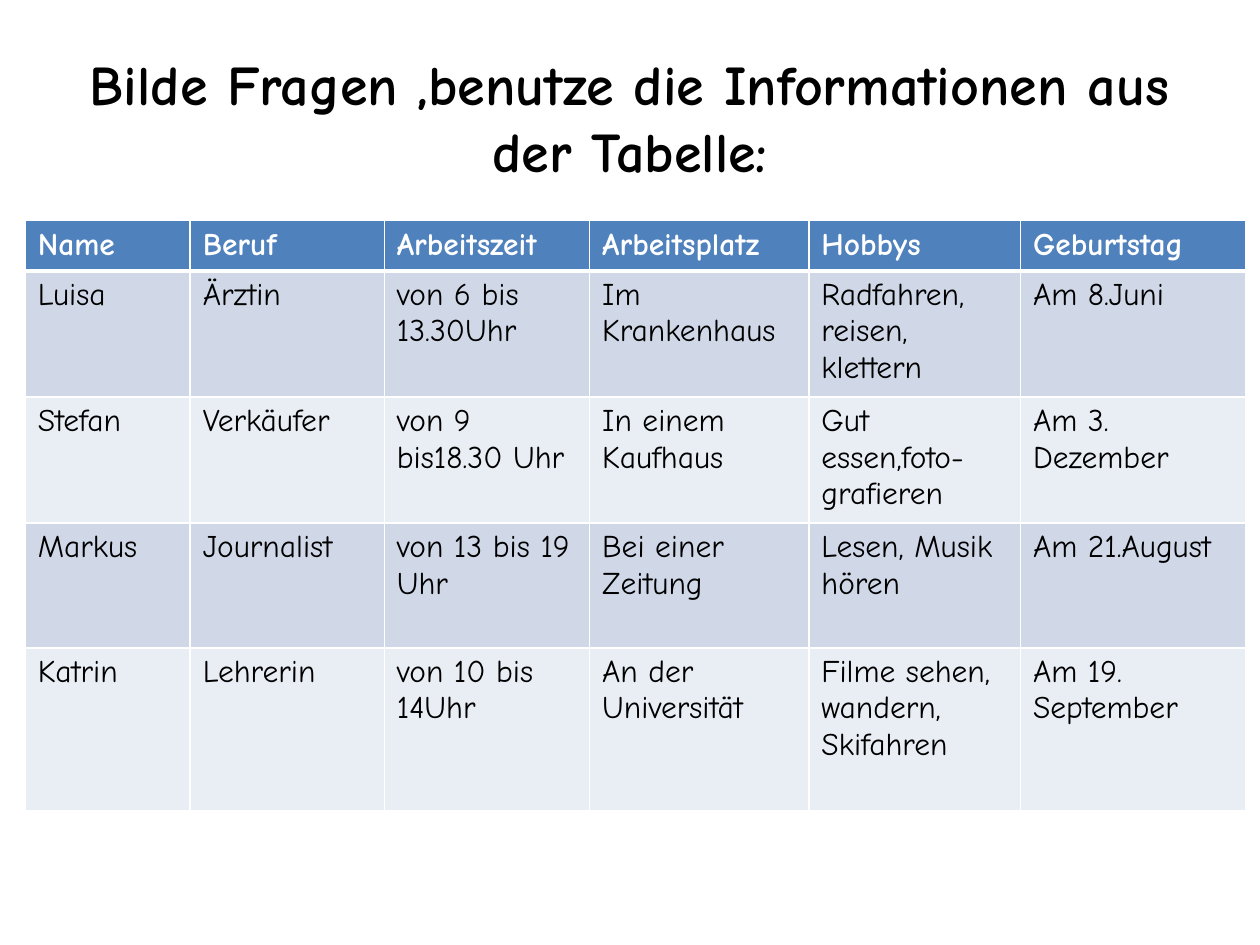
import lxml.etree
import pptx
import pptx.dml.color
import pptx.enum.text
import pptx.oxml.ns
import pptx.util
from pptx.util import Inches

COLORS = {
    "text": "000000",
    "white": "FFFFFF",
    "header": "4F81BD",
    "odd_row": "D0D8E8",
    "even_row": "E9EDF4",
}
FONT = "Comic Neue"
TITLE = "Bilde Fragen ,benutze die Informationen aus der Tabelle:"
COLUMN_WIDTHS = [1.31, 1.54, 1.63, 1.74, 1.68, 1.79]
ROW_HEIGHTS = [0.4, 0.99, 0.99, 0.99, 1.29]
ROWS = [
    ["Name", "Beruf", "Arbeitszeit", "Arbeitsplatz", "Hobbys", "Geburtstag"],
    ["Luisa", "Ärztin", "von 6 bis 13.30Uhr", "Im Krankenhaus",
     "Radfahren,\nreisen, klettern", "Am 8.Juni"],
    ["Stefan", "Verkäufer", "von 9 bis18.30 Uhr", "In einem Kaufhaus",
     "Gut essen,foto-grafieren", "Am 3. Dezember"],
    ["Markus", "Journalist", "von 13 bis 19 Uhr", "Bei einer Zeitung",
     "Lesen, Musik hören", "Am 21.August"],
    ["Katrin", "Lehrerin", "von 10 bis 14Uhr", "An der Universität",
     "Filme sehen, wandern, Skifahren", "Am 19. September"],
]


def rgb(name):
    """Return the named colour as an RGB value."""
    return pptx.dml.color.RGBColor.from_string(COLORS[name])


def write_text(text_frame, text, size=18, color="text", bold=False, align="LEFT"):
    """Fill a text frame with formatted text, one paragraph per line."""
    text_frame.text = text
    text_frame.word_wrap = True
    for paragraph in text_frame.paragraphs:
        paragraph.alignment = getattr(pptx.enum.text.PP_ALIGN, align)
        for run in paragraph.runs:
            run.font.name = FONT
            run.font.size = pptx.util.Pt(size)
            run.font.bold = bold
            run.font.color.rgb = rgb(color)


def add_borders(cell, bottom=1):
    """Draw white borders of one point, with a chosen width at the bottom."""
    properties = cell._tc.get_or_add_tcPr()
    qualify = pptx.oxml.ns.qn
    for side, width in {"L": 1, "R": 1, "T": 1, "B": bottom}.items():
        line = lxml.etree.SubElement(
            properties, qualify(f"a:ln{side}"), w=str(pptx.util.Pt(width)))
        fill = lxml.etree.SubElement(line, qualify("a:solidFill"))
        lxml.etree.SubElement(fill, qualify("a:srgbClr"), val=COLORS["white"])


def add_title(slide, left, top, width, height):
    """Place the centred heading in its box."""
    shape = slide.shapes.add_textbox(left, top, width, height)
    shape.text_frame.vertical_anchor = pptx.enum.text.MSO_ANCHOR.MIDDLE
    write_text(shape.text_frame, TITLE, size=32, bold=True, align="CENTER")


def add_people_table(slide, left, top, width, height):
    """Place the table of people, scaling its columns and rows to the box."""
    table = slide.shapes.add_table(
        len(ROWS), len(COLUMN_WIDTHS), left, top, width, height).table
    for column, share in zip(table.columns, COLUMN_WIDTHS):
        column.width = int(width * share / sum(COLUMN_WIDTHS))
    for row, share in zip(table.rows, ROW_HEIGHTS):
        row.height = int(height * share / sum(ROW_HEIGHTS))
    for row_index, texts in enumerate(ROWS):
        header = row_index == 0
        band = "header" if header else "odd_row" if row_index % 2 else "even_row"
        for column_index, text in enumerate(texts):
            cell = table.cell(row_index, column_index)
            add_borders(cell, bottom=3 if header else 1)
            cell.fill.solid()
            cell.fill.fore_color.rgb = rgb(band)
            write_text(cell.text_frame, text, bold=header,
                       color="white" if header else "text")


def main():
    """Build the slide and save the presentation."""
    presentation = pptx.Presentation()
    presentation.slide_width = Inches(10)
    presentation.slide_height = Inches(7.5)
    slide = presentation.slides.add_slide(presentation.slide_layouts[6])
    add_title(slide, Inches(0.5), Inches(0.3), Inches(9), Inches(1.25))
    add_people_table(slide, Inches(0.2), Inches(1.75), Inches(9.69), Inches(4.66))
    presentation.save("out.pptx")


if __name__ == "__main__":
    main()
